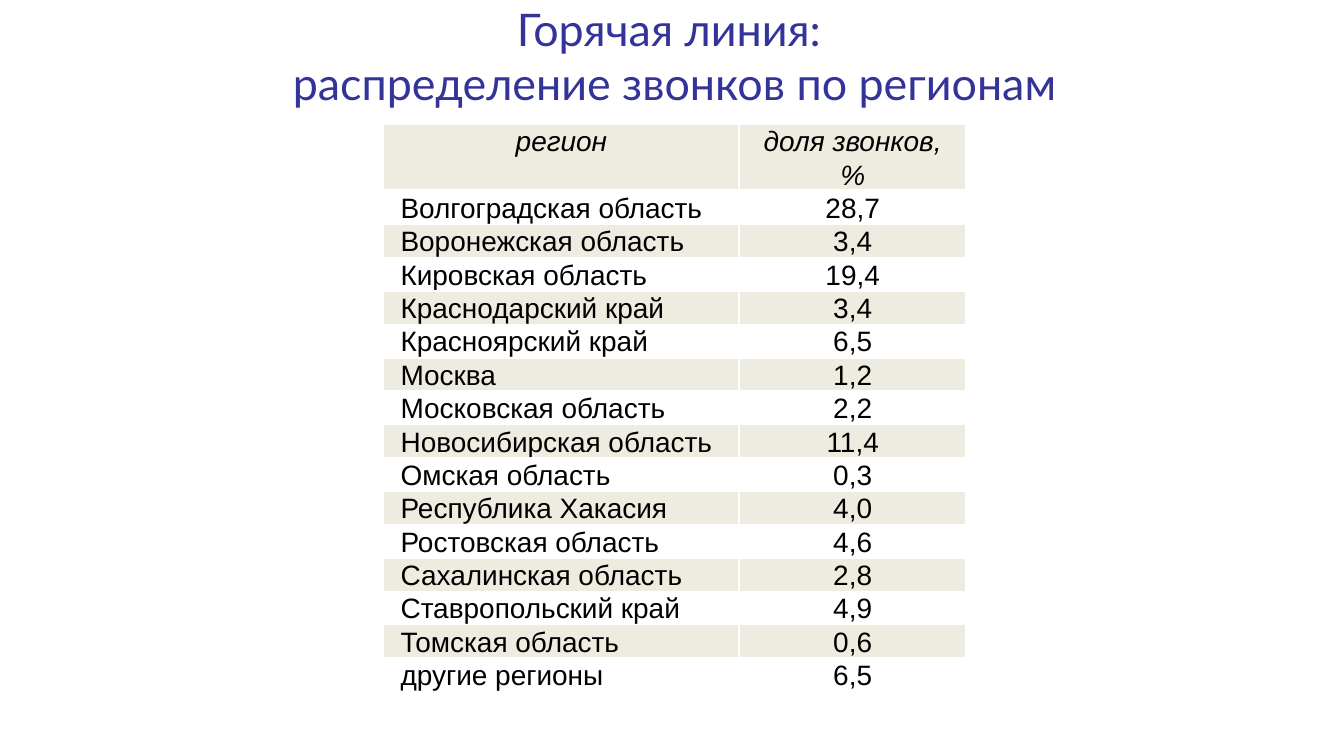
import pptx
import pptx.dml.color
import pptx.enum.text
import pptx.oxml
import pptx.oxml.ns
import pptx.util
from dataclasses import dataclass
from pptx.util import Cm, Pt


@dataclass(frozen=True)
class Theme:
    title_color: str = "333399"
    text_color: str = "000000"
    band_color: str = "EEECE1"
    border_color: str = "FFFFFF"
    title_font: str = "Lato"
    table_font: str = "Arial"
    title_size: int = 24
    table_size: int = 15
    line_spacing: float = 1.07
    border: int = 1
    header_border: int = 3


HEADER = ("регион", "доля звонков, %")
CALLS = [
    ("Волгоградская область", "28,7"),
    ("Воронежская область", "3,4"),
    ("Кировская область", "19,4"),
    ("Краснодарский край", "3,4"),
    ("Красноярский край", "6,5"),
    ("Москва", "1,2"),
    ("Московская область", "2,2"),
    ("Новосибирская область", "11,4"),
    ("Омская область", "0,3"),
    ("Республика Хакасия", "4,0"),
    ("Ростовская область", "4,6"),
    ("Сахалинская область", "2,8"),
    ("Ставропольский край", "4,9"),
    ("Томская область", "0,6"),
    ("другие регионы", "6,5"),
]


class SlideBuilder:
    def __init__(self, prs, theme):
        self.theme = theme
        self.slide = prs.slides.add_slide(prs.slide_layouts[5])

    def style(self, p, font, size, color, align, italic=False):
        p.alignment = align
        p.font.name = font
        p.font.size = Pt(size)
        p.font.italic = italic
        p.font.color.rgb = pptx.dml.color.RGBColor.from_string(color)

    def title(self, text, left, top, width, height):
        t = self.theme
        sp = self.slide.shapes.title
        sp.left, sp.top, sp.width, sp.height = left, top, width, height
        tf = sp.text_frame
        tf.text = text
        tf.word_wrap = True
        tf.auto_size = pptx.enum.text.MSO_AUTO_SIZE.NONE
        tf.vertical_anchor = pptx.enum.text.MSO_ANCHOR.MIDDLE
        self.style(tf.paragraphs[0], t.title_font, t.title_size, t.title_color,
                   pptx.enum.text.PP_ALIGN.CENTER)

    def borders(self, cell, row):
        """Draw all four cell edges, with a thicker rule under the header."""
        t = self.theme
        widths = {"lnL": t.border, "lnR": t.border,
                  "lnT": t.header_border if row == 1 else t.border,
                  "lnB": t.header_border if row == 0 else t.border}
        tc_pr = cell._tc.get_or_add_tcPr()
        for i, (tag, width) in enumerate(widths.items()):
            tc_pr.insert(i, pptx.oxml.parse_xml(
                f'<a:{tag} {pptx.oxml.ns.nsdecls("a")} w="{Pt(width)}"><a:solidFill>'
                f'<a:srgbClr val="{t.border_color}"/></a:solidFill></a:{tag}>'))

    def cell(self, cell, text, row, col):
        t = self.theme
        cell.text = text
        cell.margin_left = cell.margin_right = Cm(0.32)
        cell.margin_top = cell.margin_bottom = 0
        if row % 2 == 0:
            cell.fill.solid()
            cell.fill.fore_color.rgb = pptx.dml.color.RGBColor.from_string(t.band_color)
        else:
            cell.fill.background()
        self.borders(cell, row)
        align = pptx.enum.text.PP_ALIGN
        p = cell.text_frame.paragraphs[0]
        p.line_spacing = t.line_spacing
        self.style(p, t.table_font, t.table_size, t.text_color,
                   align.LEFT if row and col == 0 else align.CENTER, italic=row == 0)

    def table(self, rows, left, top, height, col_widths, row_heights):
        frame = self.slide.shapes.add_table(
            len(rows), len(col_widths), left, top, sum(col_widths), height)
        table = frame.table
        table.first_row = table.horz_banding = False
        for column, width in zip(table.columns, col_widths):
            column.width = width
        for i, (row, row_height) in enumerate(zip(rows, row_heights)):
            table.rows[i].height = row_height
            for j, text in enumerate(row):
                self.cell(table.cell(i, j), text, i, j)
        frame.height = height


def main():
    prs = pptx.Presentation()
    prs.slide_width, prs.slide_height = Cm(25.4), Cm(14.28)
    s = SlideBuilder(prs, Theme())
    s.title("Горячая линия: \vраспределение звонков по регионам",
            Cm(1.2), Cm(0.15), Cm(23.1), Cm(1.8))
    s.table([HEADER, *CALLS], Cm(7.25), Cm(2.35), Cm(10.92),
            col_widths=[Cm(6.72), Cm(4.29)],
            row_heights=[Cm(0.38)] + [Cm(0.58)] * (len(CALLS) - 1) + [Cm(0.74)])
    prs.save("out.pptx")


if __name__ == "__main__":
    main()
